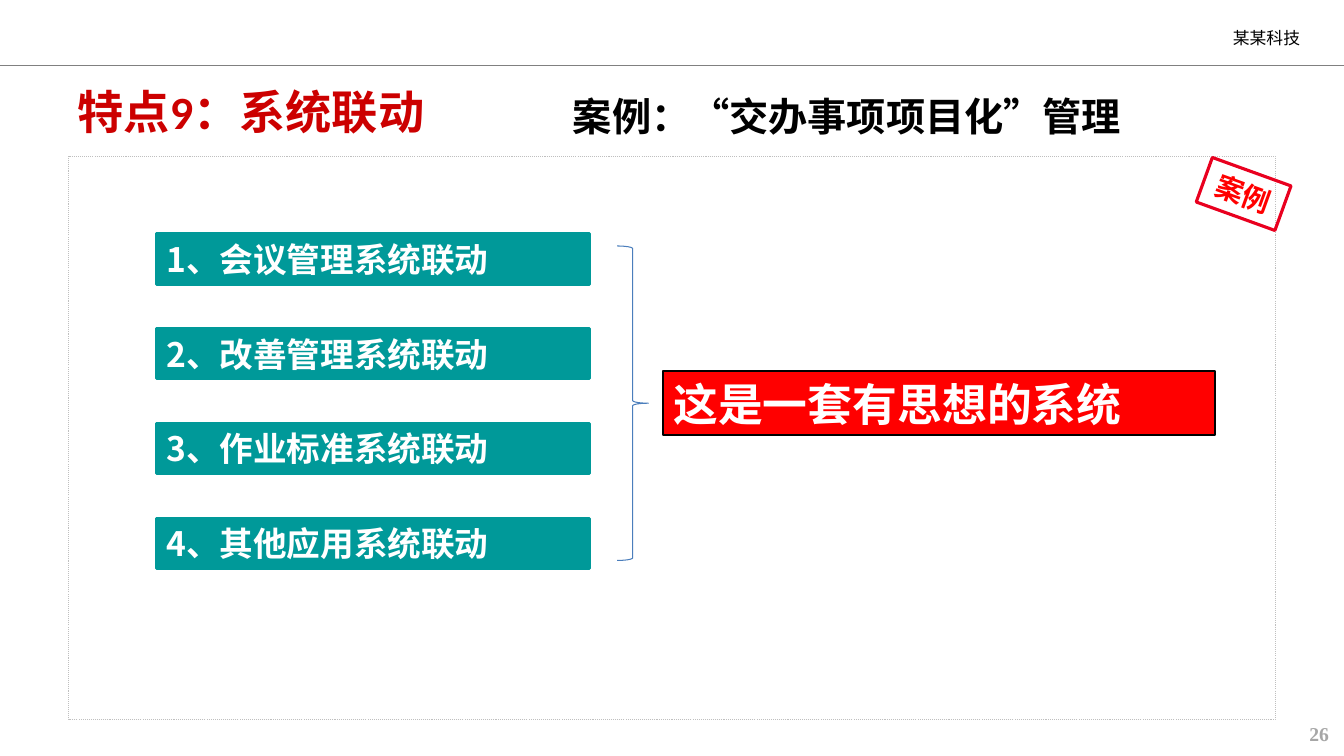
import pptx
import pptx.util
import pptx.dml.color
import pptx.enum.dml
import pptx.enum.lang
import pptx.enum.shapes
import pptx.enum.text
import pptx.oxml

Inches = pptx.util.Inches
Pt = pptx.util.Pt
RGB = pptx.dml.color.RGBColor
SHAPE = pptx.enum.shapes.MSO_SHAPE
ALIGN = pptx.enum.text.PP_ALIGN
ANCHOR = pptx.enum.text.MSO_ANCHOR
DASH = pptx.enum.dml.MSO_LINE

BLACK = RGB(0, 0, 0)
WHITE = RGB(255, 255, 255)
GRAY = RGB(0x80, 0x80, 0x80)
SILVER = RGB(0xBF, 0xBF, 0xBF)
PALE = RGB(0xA6, 0xA6, 0xA6)
TEAL = RGB(0, 0x99, 0x99)
BLUE = RGB(0x4B, 0x7E, 0xBC)
RED = RGB(255, 0, 0)
STAMP = RGB(0xE9, 0, 0x1F)
CRIMSON = RGB(0xCC, 0, 0)
HAN = "Noto Sans CJK SC"


def write(shape, text, size, color, font=HAN, bold=True, align=ALIGN.LEFT,
          anchor=ANCHOR.MIDDLE, wrap=True, pad=(0.1, 0.05, 0.1, 0.05)):
    frame = shape.text_frame
    frame.word_wrap = wrap
    frame.vertical_anchor = anchor
    (frame.margin_left, frame.margin_top,
     frame.margin_right, frame.margin_bottom) = map(Inches, pad)
    para = frame.paragraphs[0]
    para.alignment = align
    run = para.add_run()
    run.text = text
    run.font.size = Pt(size)
    run.font.bold = bold
    run.font.color.rgb = color
    run.font.name = font
    run.font.language_id = pptx.enum.lang.MSO_LANGUAGE_ID.SIMPLIFIED_CHINESE
    # East Asian typeface follows the Latin one
    face = pptx.oxml.parse_xml(
        '<a:ea xmlns:a="http://schemas.openxmlformats.org/drawingml/2006/main"'
        f' typeface="{HAN}"/>')
    run.font._element.append(face)


def label(slide, box, text, size, color, **form):
    write(slide.shapes.add_textbox(*map(Inches, box)), text, size, color, **form)


def draw(slide, kind, box, line, width, fill=None):
    shape = slide.shapes.add_shape(kind, *map(Inches, box))
    shape.shadow.inherit = False
    if fill is None:
        shape.fill.background()
    else:
        shape.fill.solid()
        shape.fill.fore_color.rgb = fill
    shape.line.color.rgb = line
    shape.line.width = Pt(width)
    return shape


def header(slide, box):
    left, top, wide, high = box
    base = Inches(top + high)
    rule = slide.shapes.add_connector(
        pptx.enum.shapes.MSO_CONNECTOR.STRAIGHT,
        Inches(left), base, Inches(left + wide), base)
    rule.line.color.rgb = GRAY
    rule.line.width = Pt(1.25)
    rule._element.spPr.append(pptx.oxml.parse_xml(
        '<a:effectLst xmlns:a="http://schemas.openxmlformats.org/drawingml/2006/main"/>'))
    label(slide, (left + wide - 1.2, top + 0.26, 0.84, 0.23), "某某科技", 12,
          BLACK, font="Arial", bold=False, pad=(0.1, 0.01, 0.02, 0.01))


def titles(slide, box):
    left, top, wide, high = box
    label(slide, (left, top, 4.27, high), "特点9：系统联动", 33, CRIMSON,
          font="Calibri")
    label(slide, (left + 4.52, top + 0.09, wide - 4.52, 0.5),
          "案例：“交办事项项目化”管理", 28, BLACK, font="Calibri",
          align=ALIGN.CENTER)


def links(slide, box, names):
    left, top, wide, high = box
    bar = 0.5
    step = (high - bar) / (len(names) - 1)
    for num, name in enumerate(names):
        shape = draw(slide, SHAPE.RECTANGLE,
                     (left, top + num * step, wide, bar), TEAL, 2.25, TEAL)
        write(shape, f"{num + 1}、{name}系统联动", 24, WHITE)


def result(slide, box):
    left, top, wide, high = box
    draw(slide, SHAPE.RIGHT_BRACE, (left, top, 0.31, high), BLUE, 0.75)
    tall = 0.64
    shape = draw(slide, SHAPE.RECTANGLE,
                 (left + 0.46, top + (high - tall) / 2, wide - 0.46, tall),
                 BLACK, 1.5, RED)
    write(shape, "这是一套有思想的系统", 32, WHITE, font="Times New Roman")


def panel(slide, box):
    left, top, wide, high = box
    frame = draw(slide, SHAPE.RECTANGLE, box, SILVER, 0.75)
    frame.line.dash_style = DASH.ROUND_DOT
    links(slide, (left + 0.87, top + 0.77, 4.3, 3.32),
          ("会议管理", "改善管理", "作业标准", "其他应用"))
    result(slide, (left + 5.44, top + 0.89, 5.93, 3.12))
    # Tilted stamp on the top right corner
    stamp = draw(slide, SHAPE.RECTANGLE,
                 (left + wide - 0.73, top + 0.14, 0.83, 0.47), STAMP, 2.25)
    stamp.rotation = 19.9
    write(stamp, "案例", 20, RED, font="Arial", wrap=False,
          align=ALIGN.CENTER, pad=(0.13, 0.07, 0.13, 0.07))


def footer(slide, box):
    label(slide, box, "26", 14, PALE, font="Times New Roman",
          align=ALIGN.RIGHT, anchor=ANCHOR.TOP)


def main():
    deck = pptx.Presentation()
    deck.slide_width = Inches(13.33)
    deck.slide_height = Inches(7.5)
    slide = deck.slides.add_slide(deck.slide_layouts[6])
    header(slide, (0, 0, 13.33, 0.65))
    titles(slide, (0.67, 0.81, 10.94, 0.58))
    panel(slide, (0.68, 1.55, 11.97, 5.59))
    footer(slide, (12.13, 7.11, 1.15, 0.34))
    deck.save("out.pptx")


if __name__ == "__main__":
    main()
